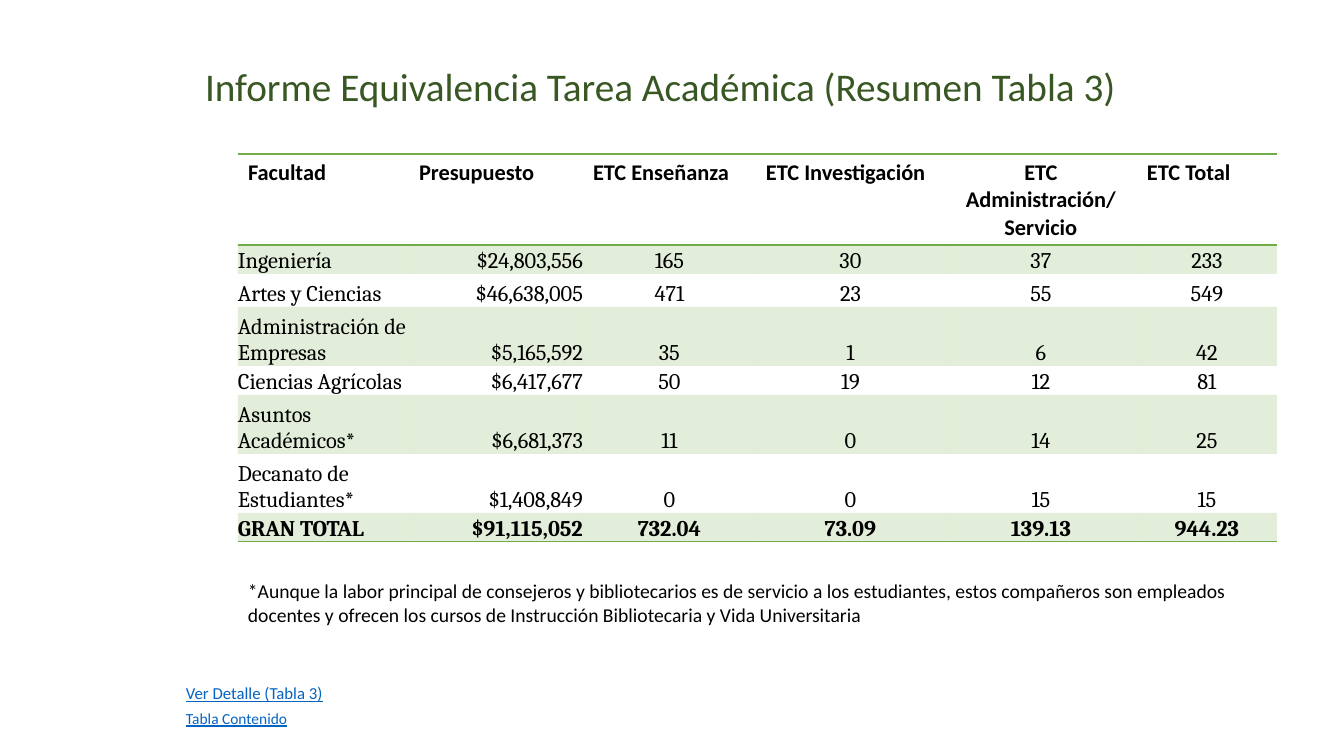
from lxml import etree
from pptx import Presentation
from pptx import util as u
from pptx.dml.color import RGBColor
from pptx.enum import text
from pptx.oxml import ns

PX = 914400 / 100.8
COLORS = {"title": "385723", "ink": "000000", "link": "0563C1", "green": "70AD47"}
PLAIN_TABLE_STYLE = "{2D5ABB26-0587-4C30-8999-92F81FD0307C}"
LEFT, CENTER, RIGHT = text.PP_ALIGN.LEFT, text.PP_ALIGN.CENTER, text.PP_ALIGN.RIGHT

COLUMN_WIDTHS = [171, 174, 173, 189, 192, 140]
ROW_HEIGHTS = [91, 29, 33, 59, 29, 59, 59, 29]
ALIGNMENTS = [LEFT, RIGHT, CENTER, CENTER, CENTER, CENTER]
ROWS = [
    ["Facultad", "Presupuesto", "ETC Enseñanza", "ETC Investigación",
     "ETC Administración/ Servicio", "ETC Total"],
    ["Ingeniería", "$24,803,556", "165", "30", "37", "233"],
    ["Artes y Ciencias", "$46,638,005", "471", "23", "55", "549"],
    ["Administración de Empresas", "$5,165,592", "35", "1", "6", "42"],
    ["Ciencias Agrícolas", "$6,417,677", "50", "19", "12", "81"],
    ["Asuntos Académicos*", "$6,681,373", "11", "0", "14", "25"],
    ["Decanato de Estudiantes*", "$1,408,849", "0", "0", "15", "15"],
    ["GRAN TOTAL", "$91,115,052", "732.04", "73.09", "139.13", "944.23"],
]


def px(length):
    return u.Emu(round(length * PX))


def format_paragraph(paragraph, size, color, name="Calibri", align=LEFT,
                     bold=False, underline=False):
    paragraph.alignment = align
    font = paragraph.font
    font.name, font.size = name, u.Pt(size)
    font.bold, font.underline = bold, underline
    font.color.rgb = RGBColor.from_string(COLORS[color])


def fill_text(shape, content, box, size, color, wrap=False, underline=False):
    shape.left, shape.top, shape.width, shape.height = map(px, box)
    frame = shape.text_frame
    frame.text = content
    frame.word_wrap = wrap
    frame.auto_size = text.MSO_AUTO_SIZE.SHAPE_TO_FIT_TEXT
    frame.vertical_anchor = text.MSO_ANCHOR.TOP
    format_paragraph(frame.paragraphs[0], size, color, underline=underline)


def add_text(slide, content, box, size, color, **options):
    shape = slide.shapes.add_textbox(0, 0, 0, 0)
    fill_text(shape, content, box, size, color, **options)


def add_border(cell, side):
    properties = cell._tc.get_or_add_tcPr()
    line = etree.SubElement(properties, ns.qn(f"a:{side}"), w=str(u.Pt(1)))
    fill = etree.SubElement(line, ns.qn("a:solidFill"))
    etree.SubElement(fill, ns.qn("a:srgbClr"), val=COLORS["green"])


def tint_cell(cell):
    cell.fill.solid()
    cell.fill.fore_color.rgb = RGBColor.from_string(COLORS["green"])
    color = cell._tc.tcPr.find(".//" + ns.qn("a:srgbClr"), None) \
        if cell._tc.tcPr.find(ns.qn("a:solidFill")) is None \
        else cell._tc.tcPr.find(ns.qn("a:solidFill")).find(ns.qn("a:srgbClr"))
    etree.SubElement(color, ns.qn("a:alpha"), val="20000")


def format_cell(cell, row, column):
    header, total = row == 0, row == len(ROWS) - 1
    cell.text = ROWS[row][column]
    if header:
        align = CENTER if column == 4 else LEFT
        add_border(cell, "lnT")
    else:
        align = ALIGNMENTS[column]
        cell.margin_left = cell.margin_right = cell.margin_top = cell.margin_bottom = 0
        cell.vertical_anchor = text.MSO_ANCHOR.BOTTOM
    if header or total:
        add_border(cell, "lnB")
    if row % 2:
        tint_cell(cell)
    else:
        cell.fill.background()
    format_paragraph(cell.text_frame.paragraphs[0], 16, "ink",
                     "Calibri" if header else "Cambria", align, header or total)


def add_faculty_table(slide, left, top):
    table = slide.shapes.add_table(
        len(ROWS), len(COLUMN_WIDTHS), px(left), px(top),
        px(sum(COLUMN_WIDTHS)), px(sum(ROW_HEIGHTS))).table
    table._tbl.tblPr.find(ns.qn("a:tableStyleId")).text = PLAIN_TABLE_STYLE
    table.horz_banding = False
    for column, width in zip(table.columns, COLUMN_WIDTHS):
        column.width = px(width)
    for row, height in enumerate(ROW_HEIGHTS):
        table.rows[row].height = px(height)
        for column in range(len(COLUMN_WIDTHS)):
            format_cell(table.cell(row, column), row, column)


def main():
    presentation = Presentation()
    presentation.slide_width, presentation.slide_height = px(1344), px(756)
    slide = presentation.slides.add_slide(presentation.slide_layouts[5])

    # Title
    fill_text(slide.shapes.title, "Informe Equivalencia Tarea Académica (Resumen Tabla 3)",
              (195, 57, 949, 152), 28, "title")

    # Faculty summary
    add_faculty_table(slide, 238, 154)

    # References and footnote
    add_text(slide, "Ver Detalle (Tabla 3)", (176, 678, 158, 30), 12, "link", underline=True)
    add_text(slide, "Tabla Contenido", (176, 704, 123, 29), 11, "link", underline=True)
    add_text(slide, "*Aunque la labor principal de consejeros y bibliotecarios es de servicio "
             "a los estudiantes, estos compañeros son empleados docentes y ofrecen los cursos "
             "de Instrucción Bibliotecaria y Vida Universitaria",
             (238, 574, 1039, 57), 14, "ink", wrap=True)

    presentation.save("out.pptx")


if __name__ == "__main__":
    main()
